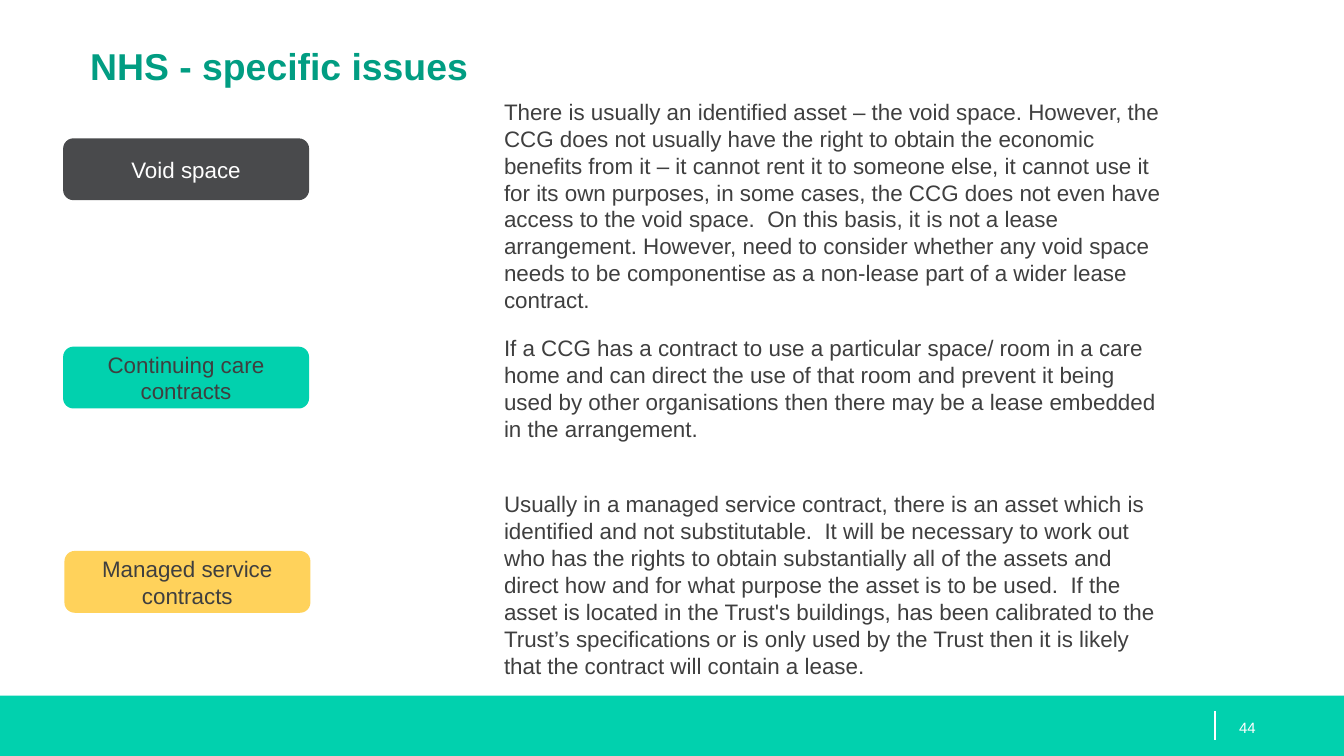
from pptx import Presentation
from pptx.dml.color import RGBColor
from pptx.enum.shapes import MSO_CONNECTOR as Line, MSO_SHAPE as Shape
from pptx.enum.text import MSO_ANCHOR as Anchor, MSO_AUTO_SIZE as Fit, PP_ALIGN as Align
from pptx.oxml.ns import qn
from pptx.util import Inches, Pt

WHITE = RGBColor(0xFF, 0xFF, 0xFF)
INK = RGBColor(0x3F, 0x3F, 0x3F)
GREEN = RGBColor(0x01, 0x9D, 0x82)
TEAL = RGBColor(0x01, 0xD1, 0xAE)
GREY = RGBColor(0x49, 0x4A, 0x4C)
GOLD = RGBColor(0xFF, 0xD2, 0x5B)

TITLE = "NHS - specific issues"
PAGE = "44"
# label, fill, label colour, (label left, label top), text top, text height, text
ISSUES = [
    ("Void space", GREY, WHITE, (0.47, 1.03), 0.73, 1.36,
     "There is usually an identified asset – the void space. However, the CCG does not "
     "usually have the right to obtain the economic benefits from it – it cannot rent it "
     "to someone else, it cannot use it for its own purposes, in some cases, the CCG does "
     "not even have access to the void space.  On this basis, it is not a lease "
     "arrangement. However, need to consider whether any void space needs to be "
     "componentise as a non-lease part of a wider lease contract."),
    ("Continuing care contracts", TEAL, INK, (0.47, 2.58), 2.49, 0.87,
     "If a CCG has a contract to use a particular space/ room in a care home and can "
     "direct the use of that room and prevent it being used by other organisations then "
     "there may be a lease embedded in the arrangement."),
    ("Managed service contracts", GOLD, INK, (0.48, 4.1), 3.65, 1.36,
     "Usually in a managed service contract, there is an asset which is identified and "
     "not substitutable.  It will be necessary to work out who has the rights to obtain "
     "substantially all of the assets and direct how and for what purpose the asset is to "
     "be used.  If the asset is located in the Trust's buildings, has been calibrated to "
     "the Trust’s specifications or is only used by the Trust then it is likely that the "
     "contract will contain a lease."),
]

WIDE = 10
HIGH = WIDE * 9 / 16
BAR = 0.45
LABEL = (1.83, 0.46)
TEXT_X, TEXT_W = 3.75, 4.91
FLUSH = (0, 0, 0, 0)


def put(shape, box):
    names = ("left", "top", "width", "height")
    for name, val in zip(names, box):
        setattr(shape, name, Inches(val))


def write(shape, text, size, color, pad=None, bold=False,
          align=Align.LEFT, anchor=Anchor.TOP):
    frame = shape.text_frame
    frame.text = text
    form = {"word_wrap": True, "auto_size": Fit.NONE, "vertical_anchor": anchor}
    if pad:
        sides = ("margin_left", "margin_top", "margin_right", "margin_bottom")
        form.update(zip(sides, map(Inches, pad)))
    for name, val in form.items():
        setattr(frame, name, val)
    par = frame.paragraphs[0]
    par.alignment = align
    par.space_before = Pt(0)
    for name, val in {"name": "Arial", "size": Pt(size), "bold": bold}.items():
        setattr(par.runs[0].font, name, val)
    par.runs[0].font.color.rgb = color
    return par


def block(kind, box, fill):
    shape = slide.shapes.add_shape(kind, *map(Inches, box))
    shape.shadow.inherit = False
    shape.fill.solid()
    shape.fill.fore_color.rgb = fill
    shape.line.fill.background()
    return shape


def plain(par):
    """Clear the bullet and hanging indent of a body paragraph."""
    props = par._p.get_or_add_pPr()
    props.set("marL", "0")
    props.set("indent", "0")
    props.append(props.makeelement(qn("a:buNone"), {}))


deck = Presentation()
deck.slide_width, deck.slide_height = Inches(WIDE), Inches(HIGH)
slide = deck.slides.add_slide(deck.slide_layouts[1])
title, body = slide.placeholders

put(title, (0.67, 0.32, 8.66, 0.72))
write(title, TITLE, 20, GREEN, FLUSH, bold=True)

block(Shape.RECTANGLE, (0, HIGH - BAR, WIDE, BAR), TEAL)
rule = slide.shapes.add_connector(Line.STRAIGHT, *map(Inches, (9.04, 5.29, 9.04, 5.51)))
rule.line.color.rgb = WHITE
rule.line.width = Pt(0.75)
props = rule._element.spPr
props.append(props.makeelement(qn("a:effectLst"), {}))
page = slide.shapes.add_textbox(*map(Inches, (9.02, 5.19, 0.75, 0.44)))
write(page, PAGE, 8, WHITE, (0.2, 0, 0, 0), anchor=Anchor.MIDDLE)

for row, (label, fill, color, spot, top, high, text) in enumerate(ISSUES):
    tag = block(Shape.ROUNDED_RECTANGLE, spot + LABEL, fill)
    write(tag, label, 12, color, align=Align.CENTER, anchor=Anchor.MIDDLE)
    box = (TEXT_X, top, TEXT_W, high)
    if row == 0:
        put(body, box)
        plain(write(body, text, 12, INK, FLUSH))
    else:
        note = slide.shapes.add_textbox(*map(Inches, box))
        write(note, text, 12, INK, FLUSH)

deck.save("out.pptx")
